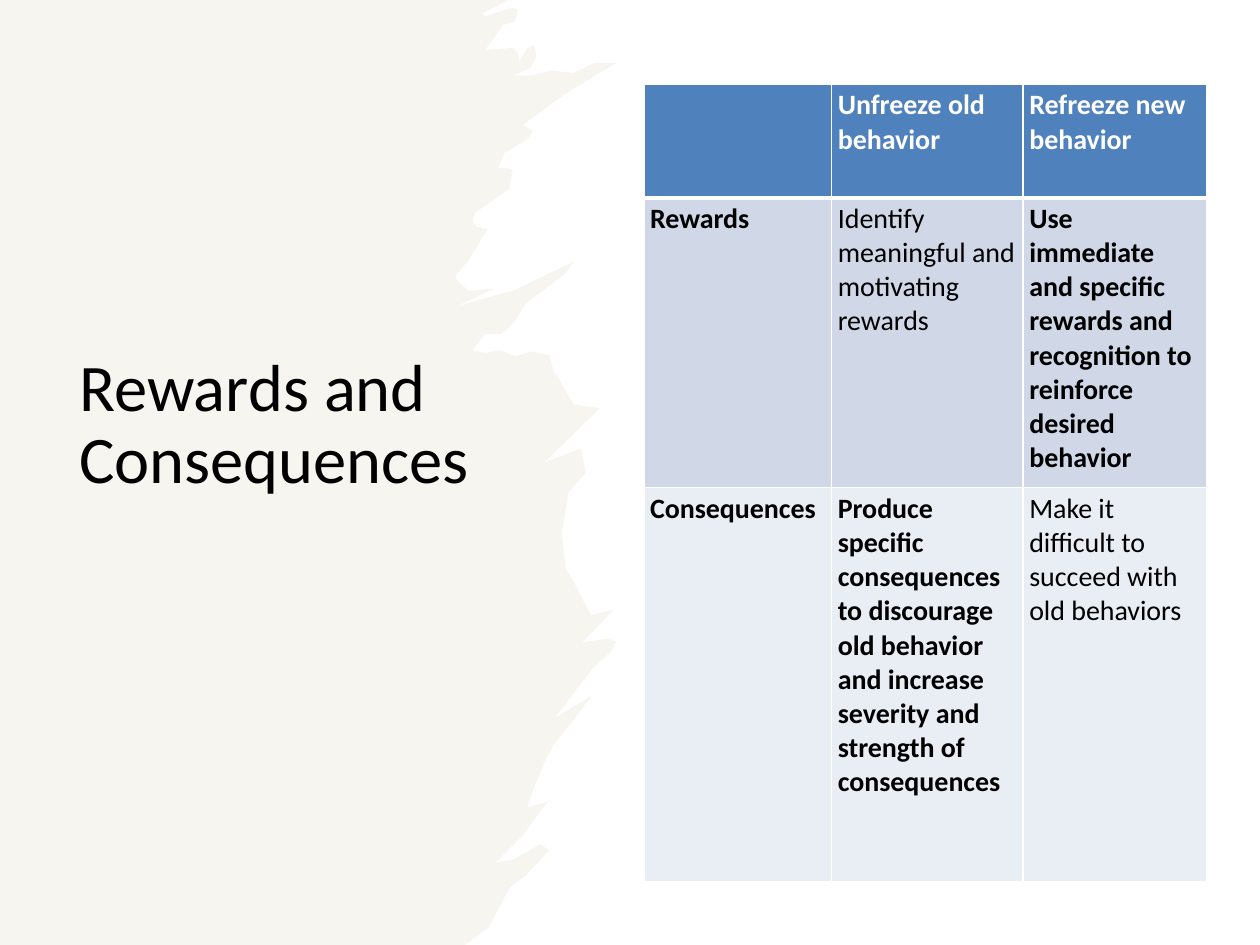
from pptx import Presentation
from pptx.dml.color import RGBColor
from pptx.enum.text import MSO_ANCHOR, MSO_AUTO_SIZE, PP_ALIGN
from pptx.oxml.ns import qn
from pptx.util import Inches, Pt
from lxml import etree


def rgb(hex_code):
    return RGBColor.from_string(hex_code)


def add_run(paragraph, text, size, color, bold=False):
    run = paragraph.add_run()
    run.text = text
    run.font.name = "Calibri"
    run.font.size = Pt(size)
    run.font.bold = bold
    run.font.color.rgb = rgb(color)


prs = Presentation()
prs.slide_width, prs.slide_height = Inches(10), Inches(7.5)
slide = prs.slides.add_slide(prs.slide_layouts[5])
slide.background.fill.solid()
slide.background.fill.fore_color.rgb = rgb("FFFFFF")

# Ragged right edge of the brush stroke, from bottom to top, in inches
brush_edge = [
    (3.69, 7.5), (3.88, 7.36), (4.01, 7.11), (4.05, 7.04), (4.17, 6.95),
    (4.36, 6.75), (4.29, 6.7), (4.08, 6.82), (3.93, 6.85), (4.14, 6.64),
    (4.35, 6.36), (4.19, 6.41), (4.19, 6.38), (4.32, 6.05), (4.39, 5.92),
    (4.7, 5.52), (4.4, 5.7), (4.7, 5.31), (4.85, 5.17), (4.89, 5.09),
    (4.82, 5.07), (4.62, 5.1), (4.87, 4.84), (4.69, 4.88), (4.63, 4.77),
    (4.55, 4.61), (4.49, 4.52), (4.46, 4.23), (4.51, 3.91), (4.65, 3.75),
    (4.61, 3.56), (4.32, 3.67), (4.76, 3.24), (4.68, 3.23), (4.55, 3.21),
    (4.42, 2.98), (4.4, 2.97), (4.36, 2.82), (4.21, 2.79), (4.09, 2.83),
    (3.97, 2.78), (3.85, 2.8), (3.75, 2.78), (3.85, 2.65), (3.98, 2.65),
    (4.08, 2.56), (4.17, 2.41), (4.49, 2.17), (4.55, 2.08), (4.09, 2.3),
    (3.63, 2.43), (3.92, 2.29), (3.72, 2.31), (3.62, 2.22), (3.62, 2.18),
    (3.7, 2.09), (3.74, 2.03), (3.87, 1.82), (3.78, 1.8), (3.75, 1.75),
    (3.77, 1.69), (4.04, 1.5), (4.07, 1.35), (4.01, 1.33), (3.95, 1.34),
    (4, 1.22), (4.19, 1.1), (4.23, 1.04), (4.18, 1.01), (4.15, 0.99),
    (4.51, 0.73), (4.89, 0.5), (4.72, 0.5), (4.55, 0.58), (4.38, 0.56),
    (4.22, 0.6), (4.07, 0.6), (4.21, 0.54), (4.26, 0.45), (4.24, 0.36),
    (4.19, 0.38), (4.12, 0.49), (4.11, 0.42), (4.07, 0.38), (3.85, 0.4),
    (3.99, 0.2), (4.09, 0.17), (4.11, 0.08), (4.07, 0.06), (3.85, 0.13),
    (3.82, 0.11), (3.94, 0.05), (4.03, 0),
]

builder = slide.shapes.build_freeform(0, 0)
builder.add_line_segments(
    [(Inches(x), Inches(y)) for x, y in [(0, 7.5), *brush_edge]], close=True)
brush = builder.convert_to_shape()
brush.shadow.inherit = False
brush.line.fill.background()
brush.fill.solid()
brush.fill.fore_color.rgb = rgb("EEECE1")
brush_color = brush._element.spPr.find(qn("a:solidFill")).find(qn("a:srgbClr"))
etree.SubElement(brush_color, qn("a:alpha"), val="50000")
slide.shapes._spTree.insert(2, brush._element)  # behind the title

title = slide.shapes.title
title.left, title.top = Inches(0.53), Inches(0.7)
title.width, title.height = Inches(3.79), Inches(3.3)
title_frame = title.text_frame
title_frame.word_wrap = True
title_frame.auto_size = MSO_AUTO_SIZE.NONE
title_frame.vertical_anchor = MSO_ANCHOR.BOTTOM
heading = title_frame.paragraphs[0]
heading.alignment = PP_ALIGN.LEFT
heading.line_spacing = 0.9
add_run(heading, "Rewards and Consequences", 38, "000000")

# Each row: height, fill, text colour, then (text, bold) for each cell
rows = [
    (0.9, "4F81BD", "FFFFFF", [
        ("", True),
        ("Unfreeze old behavior", True),
        ("Refreeze new behavior", True)]),
    (2.3, "D0D8E8", "000000", [
        ("Rewards", True),
        ("Identify meaningful and motivating rewards", False),
        ("Use immediate and specific rewards and recognition to reinforce "
         "desired behavior", True)]),
    (3.13, "E9EDF4", "000000", [
        ("Consequences", True),
        ("Produce specific consequences to discourage old behavior and "
         "increase severity and strength of consequences", True),
        ("Make it difficult to succeed with old behaviors", False)]),
]
column_widths = [1.49, 1.52, 1.46]

table = slide.shapes.add_table(
    len(rows), len(column_widths), Inches(5.11), Inches(0.67),
    Inches(sum(column_widths)), Inches(6.33)).table
for column, width in zip(table.columns, column_widths):
    column.width = Inches(width)
for table_row, (height, fill, color, contents) in zip(table.rows, rows):
    table_row.height = Inches(height)
    for cell, (text, bold) in zip(table_row.cells, contents):
        cell.fill.solid()
        cell.fill.fore_color.rgb = rgb(fill)
        cell.margin_left = cell.margin_right = Inches(0.05)
        cell.margin_top = cell.margin_bottom = Inches(0.03)
        if text:
            add_run(cell.text_frame.paragraphs[0], text, 16, color, bold)

# Thick white rule under the header row
for header_cell in table.rows[0].cells:
    cell_props = header_cell._tc.get_or_add_tcPr()
    rule = etree.Element(qn("a:lnB"), w=str(Pt(3)))
    rule_fill = etree.SubElement(rule, qn("a:solidFill"))
    etree.SubElement(rule_fill, qn("a:srgbClr"), val="FFFFFF")
    cell_props.insert(0, rule)

prs.save("out.pptx")
